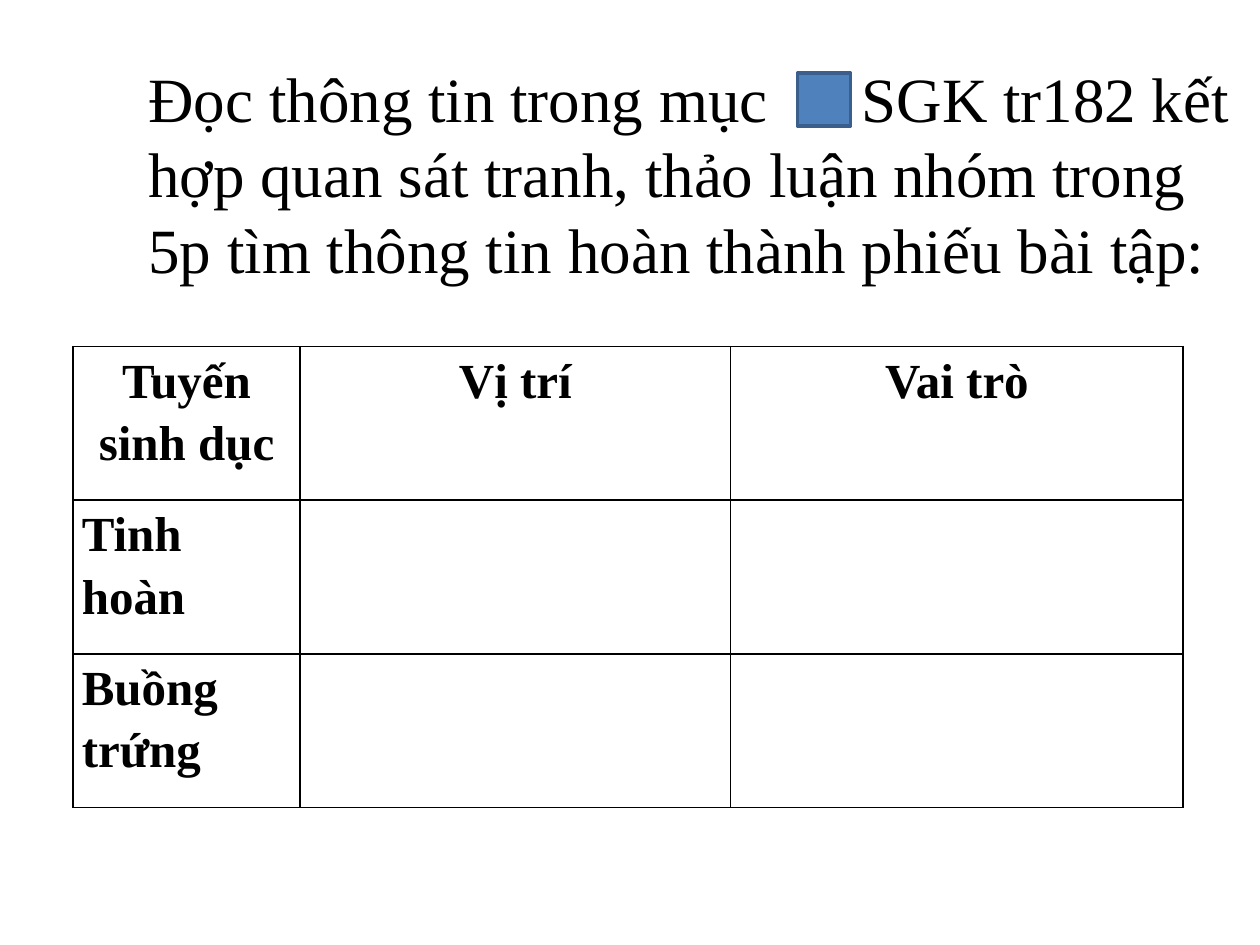
from lxml import etree
from pptx import Presentation
from pptx.dml.color import RGBColor
from pptx.enum import shapes, text
from pptx.oxml import ns
from pptx.util import Inches, Pt

BLACK = RGBColor(0x00, 0x00, 0x00)
BLUE = RGBColor(0x4F, 0x81, 0xBD)
DARK_BLUE = RGBColor(0x3A, 0x5F, 0x8C)


def set_font(paragraph, size, bold=False):
    paragraph.font.name = "Times New Roman"
    paragraph.font.size = Pt(size)
    paragraph.font.bold = bold
    paragraph.font.color.rgb = BLACK


def add_borders(cell):
    properties = cell._tc.get_or_add_tcPr()
    for position, side in enumerate(("lnL", "lnR", "lnT", "lnB")):
        border = etree.Element(ns.qn(f"a:{side}"), w=str(Pt(1)))
        fill = etree.SubElement(border, ns.qn("a:solidFill"))
        etree.SubElement(fill, ns.qn("a:srgbClr"), val=str(BLACK))
        properties.insert(position, border)


prs = Presentation()
prs.slide_width, prs.slide_height = Inches(10), Inches(7.5)
slide = prs.slides.add_slide(prs.slide_layouts[6])

task = slide.shapes.add_textbox(Inches(1.08), Inches(0.42), Inches(8.83), Inches(1.92))
task.text_frame.word_wrap = True
task.text_frame.auto_size = text.MSO_AUTO_SIZE.SHAPE_TO_FIT_TEXT
instruction = task.text_frame.paragraphs[0]
instruction.text = (
    "Đọc thông tin trong mục\tSGK tr182 kết hợp quan sát tranh, "
    "thảo luận nhóm trong 5p tìm thông tin hoàn thành phiếu bài tập:"
)
tab_stops = etree.SubElement(instruction._p.get_or_add_pPr(), ns.qn("a:tabLst"))
etree.SubElement(tab_stops, ns.qn("a:tab"), pos=str(Inches(5.66)), algn="l")
set_font(instruction, 36)

section_mark = slide.shapes.add_shape(
    shapes.MSO_SHAPE.RECTANGLE, Inches(6.33), Inches(0.58), Inches(0.42), Inches(0.42)
)
section_mark.shadow.inherit = False
section_mark.fill.solid()
section_mark.fill.fore_color.rgb = BLUE
section_mark.line.color.rgb = DARK_BLUE
section_mark.line.width = Pt(2)

worksheet_rows = [
    ("Tuyến sinh dục", "Vị trí", "Vai trò"),
    ("Tinh hoàn", "", ""),
    ("Buồng trứng", "", ""),
]
worksheet = slide.shapes.add_table(
    3, 3, Inches(0.58), Inches(2.75), Inches(8.81), Inches(3.66)
).table
worksheet.horz_banding = False
for column, width in zip(worksheet.columns, (1.8, 3.42, 3.59)):
    column.width = Inches(width)

for r, row in enumerate(worksheet_rows):
    worksheet.rows[r].height = Inches(1.22)
    for c, label in enumerate(row):
        cell = worksheet.cell(r, c)
        cell.fill.background()
        add_borders(cell)
        cell.margin_left = cell.margin_right = Inches(0.07)
        cell.margin_top = cell.margin_bottom = 0
        entry = cell.text_frame.paragraphs[0]
        entry.text = label
        entry.alignment = text.PP_ALIGN.CENTER if r == 0 else text.PP_ALIGN.LEFT
        entry.line_spacing = 1.15
        entry.space_before = Pt(4.8)
        entry.space_after = Pt(2.4)
        set_font(entry, 28, bold=True)

prs.save("out.pptx")
